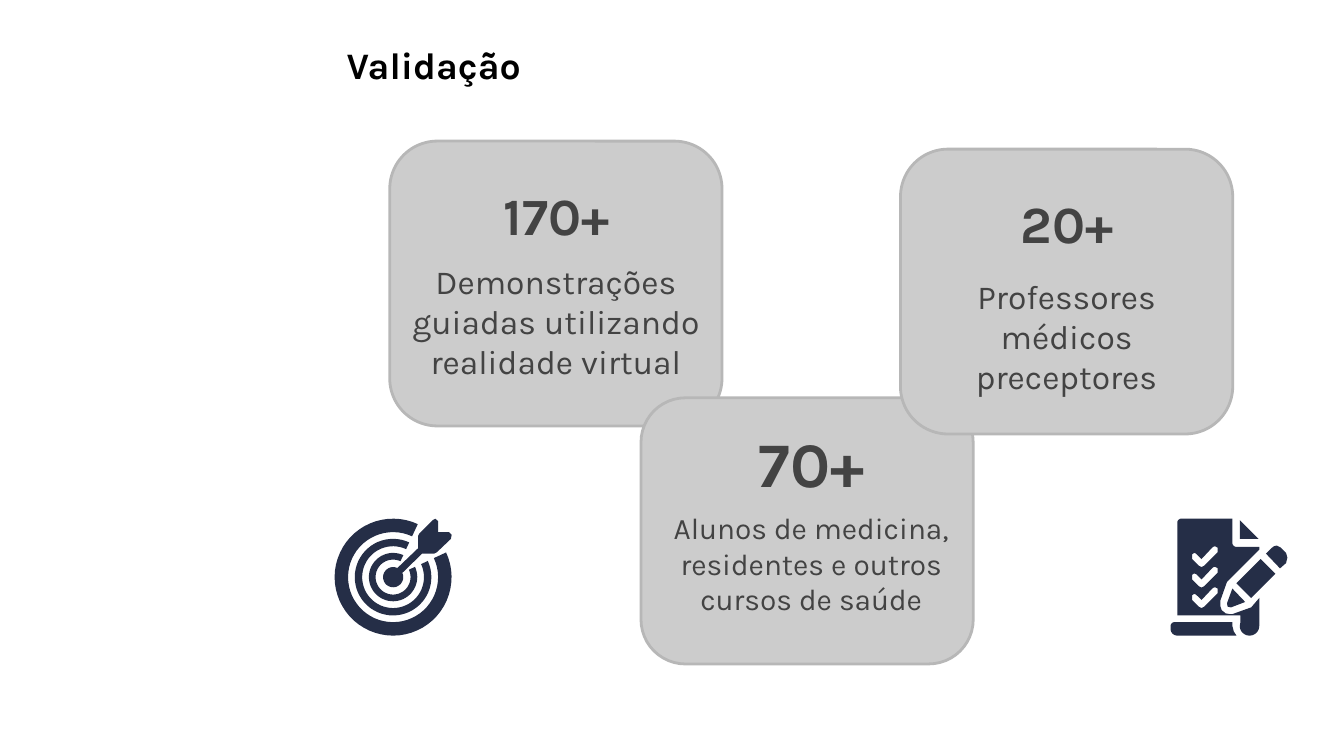
import math

import pptx
import pptx.dml.color
import pptx.enum.shapes
import pptx.enum.text
import pptx.util

Pt = pptx.util.Pt
ALIGN = pptx.enum.text.PP_ALIGN
ANCHOR = pptx.enum.text.MSO_ANCHOR
FONT = "Karla"
COLORS = {
    "title": "000000",
    "text": "434343",
    "card": "CCCCCC",
    "border": "B7B7B7",
    "icon": "252E47",
}
CARD_WIDTH = 178
ICON_SIZE = 62.64
ICON_GRID = 87
PRECISION = 100


def color(name):
    return pptx.dml.color.RGBColor.from_string(COLORS[name])


def add_text(slide, box, text, size, name="text", bold=False,
             align=ALIGN.CENTER, anchor=ANCHOR.TOP, inset=7.2, spacing=None):
    shape = slide.shapes.add_textbox(*[Pt(value) for value in box])
    frame = shape.text_frame
    frame.word_wrap = True
    frame.vertical_anchor = anchor
    frame.margin_left = frame.margin_right = Pt(7.2)
    frame.margin_top = frame.margin_bottom = Pt(inset)
    paragraph = frame.paragraphs[0]
    paragraph.alignment = align
    if spacing:
        paragraph.line_spacing = spacing
    run = paragraph.add_run()
    run.text = text
    run.font.name = FONT
    run.font.size = Pt(size)
    run.font.bold = bold
    run.font.color.rgb = color(name)


def add_title(slide, box):
    add_text(slide, box, "Validação", 20, "title", True, ALIGN.LEFT, inset=3.6, spacing=0.9)


def add_card(slide, box, number, number_size, number_offset, caption, caption_size, caption_offset):
    left, top, width, height = box
    card = slide.shapes.add_shape(
        pptx.enum.shapes.MSO_SHAPE.ROUNDED_RECTANGLE, *[Pt(value) for value in box])
    card.adjustments[0] = 0.167
    card.shadow.inherit = False
    card.fill.solid()
    card.fill.fore_color.rgb = color("card")
    card.line.color.rgb = color("border")
    card.line.width = Pt(1.5)

    number_x, number_y = number_offset
    add_text(slide, (left + number_x, top + number_y, 142.6, 35.3),
             number, number_size, bold=True, anchor=ANCHOR.MIDDLE)
    caption_x, caption_y = caption_offset
    add_text(slide, (left + caption_x, top + caption_y, width, height - caption_y),
             caption, caption_size)


def arc(x, y, radius, start, end):
    steps = max(6, round(abs(end - start) / 6))
    angles = [math.radians(start + (end - start) * step / steps) for step in range(steps + 1)]
    return [(x + radius * math.cos(angle), y + radius * math.sin(angle)) for angle in angles]


def add_icon(slide, box, parts):
    left, top, size = box
    group = slide.shapes.add_group_shape()
    for contours in parts:
        scaled = [[(x * PRECISION, y * PRECISION) for x, y in contour] for contour in contours]
        builder = group.shapes.build_freeform(
            *scaled[0][0], scale=Pt(size) / ICON_GRID / PRECISION)
        for index, contour in enumerate(scaled):
            if index:
                builder.move_to(*contour[0])
            builder.add_line_segments(contour[1:], close=True)
        shape = builder.convert_to_shape(Pt(left), Pt(top))
        shape.shadow.inherit = False
        shape.fill.solid()
        shape.fill.fore_color.rgb = color("icon")
        shape.line.fill.background()


def add_target(slide, box):
    center = ICON_GRID / 2
    gap_end, gap_start = -25, 295
    parts = [
        [arc(center, center, outer, gap_end, gap_start)
         + arc(center, center, inner, gap_start, gap_end)]
        for outer, inner in [(43.5, 33.5), (28.5, 23), (18, 13)]
    ]
    arrow = [(62, 22), (62, 13), (63, 11), (73, 1), (75, 0), (77, 2), (77, 10),
             (85, 10), (87, 12), (86.5, 15), (76, 25), (74, 26), (65, 26)]
    parts.append([arc(center, center, 7.5, gap_end, gap_start) + arrow])
    add_icon(slide, box, parts)


def add_checklist(slide, box):
    sheet = (arc(8, 3, 3, 180, 270) + [(46, 0)] + arc(49, 18, 3, 180, 90)
             + [(66, 21), (66, 23), (42, 47), (37, 61), (37, 65), (38, 68), (41, 70.5),
                (44, 71), (46, 71), (60, 66), (66, 59)]
             + arc(58.75, 79.75, 7.25, 0, 180) + [(52, 77), (52, 72), (5, 72)])
    check = [(31.5, 21), (33, 20.5), (35, 21.5), (35, 25), (25, 35), (23, 36), (21, 35),
             (16, 30), (16, 26.5), (17.5, 25.5), (19, 26), (23, 30)]
    checks = [[(x, y + row * 15.25) for x, y in check] for row in range(3)]
    eraser = [(71, 26), (75, 22), (77, 20.5), (79, 20), (82, 21.5), (86, 25.5),
              (87, 29), (86, 33), (81.5, 37)]
    tip = [(46, 52), (42, 63), (42.5, 65.5), (45, 66), (55.5, 62)]
    pencil = [(67, 30), (49, 48), (60, 59), (78, 41)]
    corner = [(51.5, 1), (51.5, 15), (65.5, 15)]
    base = (arc(3, 80, 3, 270, 180) + arc(5, 82, 5, 180, 90)
            + [(49, 87), (47, 84), (46, 80), (46, 77)])
    add_icon(slide, box, [[sheet, *checks], [eraser], [tip], [pencil], [corner], [base]])


def main():
    presentation = pptx.Presentation()
    presentation.slide_width = Pt(720)
    presentation.slide_height = Pt(405)
    slide = presentation.slides.add_slide(presentation.slide_layouts[6])

    add_title(slide, (178.6, 21.6, 512.6, 40.3))
    add_card(slide, (208.8, 75.6, CARD_WIDTH, 152.6), "170+", 28, (18, 21.6),
             "Demonstrações guiadas utilizando realidade virtual", 18, (0, 56.9))
    add_card(slide, (343.4, 213.1, CARD_WIDTH, 142.6), "70+", 34, (20.2, 16.6),
             "Alunos de medicina, residentes e outros cursos de saúde", 16, (2.2, 52.6))
    add_card(slide, (482.4, 79.9, CARD_WIDTH, 152.6), "20+", 28, (18, 21.6),
             "Professores médicos preceptores", 18, (0, 60.5))
    add_target(slide, (179.3, 277.9, ICON_SIZE))
    add_checklist(slide, (627.1, 277.9, ICON_SIZE))

    presentation.save("out.pptx")


if __name__ == "__main__":
    main()
